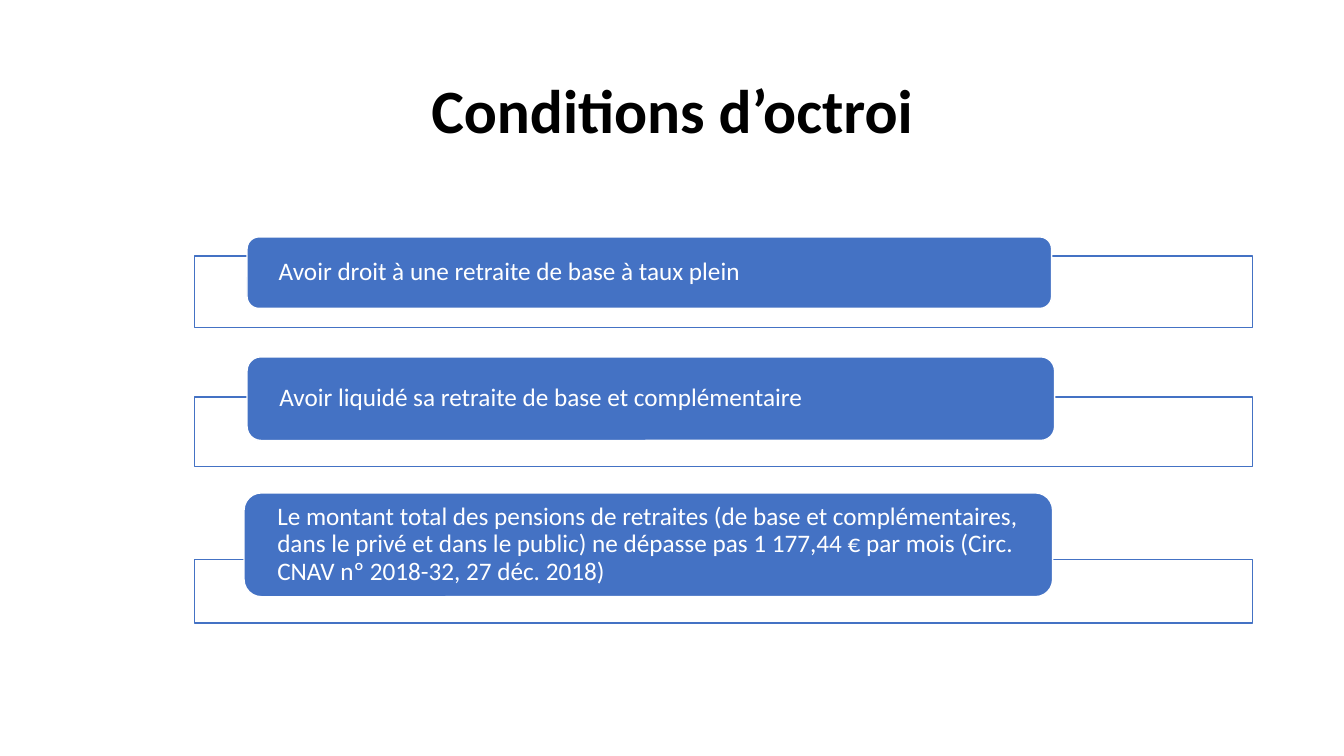
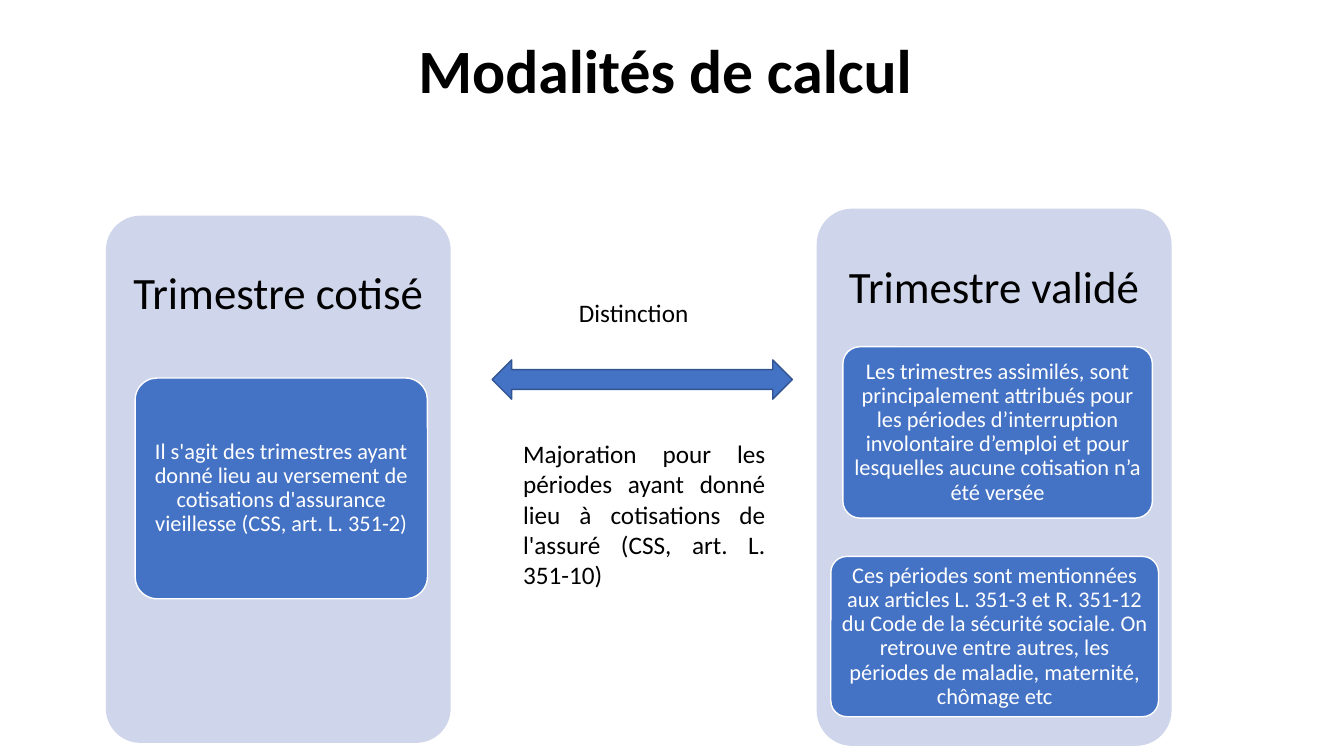
"""Build two slides on the conditions and calculation of a pension increase."""
from pptx import Presentation
from pptx.dml.color import RGBColor
from pptx.enum.shapes import MSO_SHAPE
from pptx.enum.text import MSO_ANCHOR, PP_ALIGN
from pptx.util import Inches, Pt

RECT, ROUNDED = MSO_SHAPE.RECTANGLE, MSO_SHAPE.ROUNDED_RECTANGLE
DOUBLE_ARROW = MSO_SHAPE.LEFT_RIGHT_ARROW
MIDDLE, TOP = MSO_ANCHOR.MIDDLE, MSO_ANCHOR.TOP
LEFT, CENTER, JUSTIFY = PP_ALIGN.LEFT, PP_ALIGN.CENTER, PP_ALIGN.JUSTIFY

BLUE = RGBColor(0x44, 0x72, 0xC4)
DARK_BLUE = RGBColor(0x32, 0x54, 0x91)
PALE_BLUE = RGBColor(0xCF, 0xD5, 0xEA)
WHITE = RGBColor(0xFF, 0xFF, 0xFF)
BLACK = RGBColor(0, 0, 0)
FONT = "Calibri"
TIGHT = 0.9

FRAME_LEFT, FRAME_WIDTH = 1.93, 10.49
CONDITION_INSETS = (0.28, 0)
HEADING_INSETS = (0.13, 0.13)
CARD_INSETS = (0.04, 0.03)
HEADING_SHARE = 0.3
CORNER = 0.1

CONDITIONS = [
    ("Avoir droit à une retraite de base à taux plein",
     (2.54, 0.71), (2.45, 2.35, 7.98, 0.71)),
    ("Avoir liquidé sa retraite de base et complémentaire",
     (3.94, 0.69), (2.45, 3.54, 8.01, 0.83)),
    ("Le montant total des pensions de retraites (de base et complémentaires, "
     "dans le privé et dans le public) ne dépasse pas 1 177,44 € par mois "
     "(Circ. CNAV nº 2018-32, 27 déc. 2018)",
     (5.55, 0.63), (2.42, 4.89, 8.02, 1.03)),
]

QUARTERS = [
    ("Trimestre cotisé", (1.05, 2.14, 3.42, 5.23), [
        ("Il s'agit des trimestres ayant donné lieu au versement de cotisations "
         "d'assurance vieillesse (CSS, art. L. 351-2)",
         (1.34, 3.75, 2.9, 2.19)),
    ]),
    ("Trimestre validé", (8.1, 2.07, 3.52, 5.33), [
        ("Les trimestres assimilés, sont principalement attribués pour les "
         "périodes d’interruption involontaire d’emploi et pour lesquelles "
         "aucune cotisation n’a été versée",
         (8.36, 3.44, 3.07, 1.7)),
        ("Ces périodes sont mentionnées aux articles L. 351-3 et R. 351-12 du "
         "Code de la sécurité sociale. On retrouve entre autres, les périodes "
         "de maladie, maternité, chômage etc",
         (8.24, 5.52, 3.25, 1.59)),
    ]),
]

ARROW_BOX = (4.88, 3.57, 2.98, 0.39)
ARROW_NOTES = [
    ("Distinction", (4.88, 2.9, 2.81, 0.4), CENTER),
    ("Majoration pour les périodes ayant donné lieu à cotisations de l'assuré "
     "(CSS, art. L. 351-10)", (5.09, 4.3, 2.6, 1.62), JUSTIFY),
]


def write(shape, text, size, color, align=CENTER, insets=(0.1, 0.05),
          anchor=MIDDLE, spacing=TIGHT, bold=False):
    """Fill a shape with one formatted paragraph."""
    frame = shape.text_frame
    frame.word_wrap = True
    frame.vertical_anchor = anchor
    frame.margin_left = frame.margin_right = Inches(insets[0])
    frame.margin_top = frame.margin_bottom = Inches(insets[1])
    paragraph = frame.paragraphs[0]
    paragraph.alignment = align
    paragraph.line_spacing = spacing
    run = paragraph.add_run()
    run.text = text
    run.font.name = FONT
    run.font.size = Pt(size)
    run.font.bold = bold
    run.font.color.rgb = color


def add_block(slide, preset, box, fill, line=None, corner=None):
    """Add a flat preset shape."""
    block = slide.shapes.add_shape(preset, *map(Inches, box))
    block.shadow.inherit = False
    block.fill.solid()
    block.fill.fore_color.rgb = fill
    if line is None:
        block.line.fill.background()
    else:
        block.line.color.rgb = line
        block.line.width = Pt(1)
    if corner is not None:
        block.adjustments[0] = corner
    return block


def add_label(slide, box, *args, **kwargs):
    """Add a text box with one paragraph."""
    write(slide.shapes.add_textbox(*map(Inches, box)), *args, **kwargs)


def add_titled_slide(deck, text, top):
    """Add a title-only slide with its title at the given height."""
    slide = deck.slides.add_slide(deck.slide_layouts[5])
    title = slide.shapes.title
    title.left, title.top, title.width, title.height = map(
        Inches, (0.92, top, 11.5, 1.45))
    write(title, text, 44, BLACK, bold=True)
    return slide


def build_conditions(deck):
    """Build the slide of conditions."""
    slide = add_titled_slide(deck, "Conditions d’octroi", 0.4)
    for text, (top, height), box in CONDITIONS:
        add_block(slide, RECT, (FRAME_LEFT, top, FRAME_WIDTH, height), WHITE, BLUE)
        condition = add_block(slide, ROUNDED, box, BLUE, WHITE)
        write(condition, text, 18, WHITE, LEFT, CONDITION_INSETS)


def build_calculation(deck):
    """Build the slide comparing the two kinds of quarter."""
    slide = add_titled_slide(deck, "Modalités de calcul ", 0)
    for heading, panel, cards in QUARTERS:
        add_block(slide, ROUNDED, panel, PALE_BLUE, corner=CORNER)
        left, top, width, height = panel
        add_label(slide, (left, top, width, height * HEADING_SHARE),
                  heading, 32, BLACK, insets=HEADING_INSETS)
        for text, box in cards:
            card = add_block(slide, ROUNDED, box, BLUE, WHITE, CORNER)
            write(card, text, 16, WHITE, insets=CARD_INSETS)
    add_block(slide, DOUBLE_ARROW, ARROW_BOX, BLUE, DARK_BLUE)
    for text, box, align in ARROW_NOTES:
        add_label(slide, box, text, 18, BLACK, align, anchor=TOP, spacing=1.0)


def main():
    """Build and save the deck."""
    deck = Presentation()
    deck.slide_width, deck.slide_height = Inches(13.33), Inches(7.5)
    build_conditions(deck)
    build_calculation(deck)
    deck.save("out.pptx")


if __name__ == "__main__":
    main()
